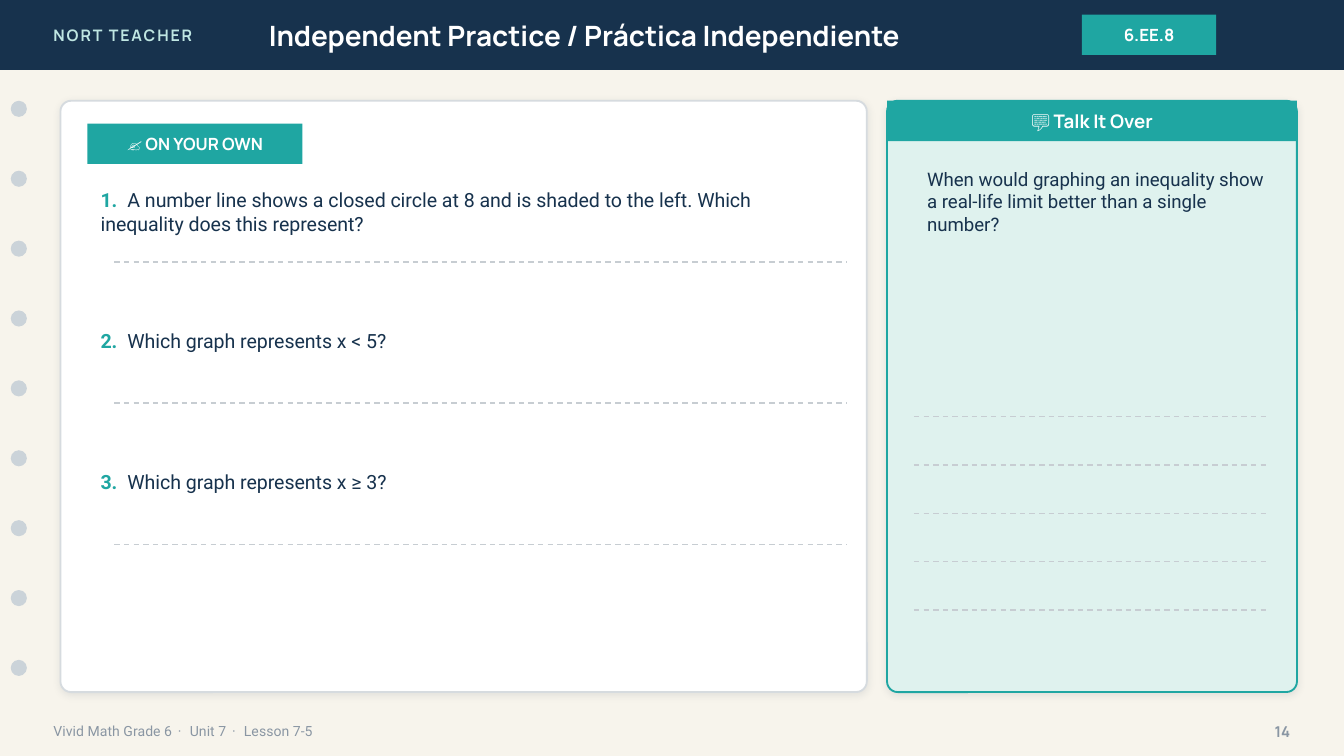
from dataclasses import dataclass

from lxml.etree import SubElement
from pptx import Presentation
from pptx.dml.color import RGBColor
from pptx.enum.dml import MSO_LINE
from pptx.enum.shapes import MSO_CONNECTOR, MSO_SHAPE as SHAPE
from pptx.enum.text import MSO_ANCHOR as ANCHOR, MSO_AUTO_SIZE, PP_ALIGN as ALIGN
from pptx.oxml.ns import qn
from pptx.util import Inches, Pt

NAVY = RGBColor(0x17, 0x32, 0x4D)
TEAL = RGBColor(0x1F, 0xA6, 0xA2)
MINT = RGBColor(0xDF, 0xF2, 0xEE)
PALE_TEAL = RGBColor(0xBF, 0xE6, 0xE2)
CREAM = RGBColor(0xF7, 0xF4, 0xEC)
WHITE = RGBColor(0xFF, 0xFF, 0xFF)
HOLE = RGBColor(0xCB, 0xD3, 0xD9)
EDGE = RGBColor(0xD6, 0xDB, 0xDF)
RULE = RGBColor(0xC7, 0xCD, 0xD2)
MUTED = RGBColor(0x8A, 0x96, 0xA3)
SHADE = RGBColor(0x1C, 0x2E, 0x42)

COLUMNS, ROWS = 100, 56.25
HEADING, BODY = "Manrope", "Roboto"
QUESTIONS = [
    "A number line shows a closed circle at 8 and is shaded to the left. "
    "Which inequality does this represent?",
    "Which graph represents x < 5?",
    "Which graph represents x ≥ 3?",
]


@dataclass
class Box:
    """A region in grid cells of a tenth of an inch."""
    left: float
    top: float
    width: float
    height: float

    def inner(self, left, top, width, height):
        """Return a box placed relative to this one."""
        return Box(self.left + left, self.top + top, width, height)

    def lengths(self):
        """Return left, top, width and height as slide lengths."""
        cells = (self.left, self.top, self.width, self.height)
        return [Inches(cell / 10) for cell in cells]


def style(color, size, name=BODY, bold=False):
    """Return the format values of a run."""
    return {"size": Pt(size), "name": name, "bold": bold, "color": color}


def add_run(paragraph, text, look, spacing=0):
    """Add formatted text, with letter spacing in points."""
    run = paragraph.add_run()
    run.text = text
    for key, value in look.items():
        if key == "color":
            run.font.color.rgb = value
        else:
            setattr(run.font, key, value)
    if spacing:
        run._r.get_or_add_rPr().set("spc", str(round(spacing * 100)))


def set_frame(frame, align=ALIGN.LEFT, anchor=ANCHOR.MIDDLE):
    """Set wrapping and alignment and return the first paragraph."""
    values = {"word_wrap": True, "auto_size": MSO_AUTO_SIZE.NONE,
              "vertical_anchor": anchor}
    for key, value in values.items():
        setattr(frame, key, value)
    paragraph = frame.paragraphs[0]
    paragraph.alignment = align
    return paragraph


def add_text(slide, box, align=ALIGN.LEFT, anchor=ANCHOR.MIDDLE):
    """Add a text box and return its paragraph."""
    return set_frame(slide.shapes.add_textbox(*box.lengths()).text_frame, align, anchor)


def add_block(slide, box, fill, kind=SHAPE.RECTANGLE):
    """Add a plain filled shape."""
    block = slide.shapes.add_shape(kind, *box.lengths())
    block.shadow.inherit = False
    block.fill.solid()
    block.fill.fore_color.rgb = fill
    block.line.fill.background()
    return block


def add_label(slide, box, text, size):
    """Add a teal block with centred white text."""
    paragraph = set_frame(add_block(slide, box, TEAL).text_frame, ALIGN.CENTER)
    add_run(paragraph, text, style(WHITE, size, HEADING, True))


def add_card(slide, box, fill, edge, corner):
    """Add a rounded card with a soft shadow."""
    card = add_block(slide, box, fill, SHAPE.ROUNDED_RECTANGLE)
    card.adjustments[0] = corner
    card.line.color.rgb = edge
    card.line.width = Pt(1)
    effects = card.element.spPr.find(qn("a:effectLst"))
    shadow = SubElement(effects, qn("a:outerShdw"), blurRad=str(Pt(4)),
                        dist=str(Pt(1)), dir="5400000", algn="bl", rotWithShape="0")
    color = SubElement(shadow, qn("a:srgbClr"), val=str(SHADE))
    SubElement(color, qn("a:alpha"), val="10000")


def add_rule(slide, box):
    """Add a dashed writing line along the top of the box."""
    left, top, width, _ = box.lengths()
    rule = slide.shapes.add_connector(MSO_CONNECTOR.STRAIGHT, left, top, left + width, top)
    rule.line.color.rgb = RULE
    rule.line.width = Pt(0.75)
    rule.line.dash_style = MSO_LINE.DASH
    SubElement(rule._element.spPr, qn("a:effectLst"))


def add_header(slide, box):
    """Place the title bar with teacher, title and standard."""
    add_block(slide, box, NAVY)
    teacher = add_text(slide, box.inner(3, 0, 24, box.height))
    add_run(teacher, "NORT TEACHER", style(PALE_TEAL, 8.5, HEADING, True), 1)
    title = slide.shapes.title
    title.left, title.top, title.width, title.height = box.inner(19, 0, 56, box.height).lengths()
    heading = set_frame(title.text_frame)
    heading.line_spacing = 1.0
    add_run(heading, "Independent Practice / Práctica Independiente",
            style(WHITE, 15, HEADING, True))
    title.element.getparent().append(title.element)
    add_label(slide, box.inner(80.5, 1.1, 10, 3), "6.EE.8", 9)


def add_binder_holes(slide, box, count):
    """Place evenly spaced binder holes down the box."""
    for index in range(count):
        hole = box.inner(0, index * box.height / count, box.width, box.width)
        add_block(slide, hole, HOLE, SHAPE.OVAL)


def add_footer(slide, box):
    """Place the lesson line and the page number."""
    look = style(MUTED, 7.5)
    lesson = add_text(slide, box.inner(0, 0, 70, box.height))
    for index, name in enumerate(("Vivid Math Grade 6", "Unit 7", "Lesson 7-5")):
        if index:
            add_run(lesson, " · ", look, 1.24)
        add_run(lesson, name, look)
    page = add_text(slide, box.inner(box.width - 5, 0, 5, box.height), ALIGN.RIGHT)
    add_run(page, "14", style(MUTED, 8, HEADING, True))


def add_practice(slide, box):
    """Place the practice card with numbered questions."""
    add_card(slide, box, WHITE, EDGE, 0.018)
    add_label(slide, box.inner(2, 1.7, 16, 3), "✍️ ON YOUR OWN", 9)
    for index, question in enumerate(QUESTIONS):
        area = box.inner(2, 6 + index * 10.5, box.width - 3.5, 5)
        paragraph = add_text(slide, area, anchor=ANCHOR.TOP)
        tabs = SubElement(paragraph._p.get_or_add_pPr(), qn("a:tabLst"))
        SubElement(tabs, qn("a:tab"), pos=str(Inches(0.2)), algn="l")
        add_run(paragraph, f"{index + 1}.\t", style(TEAL, 10.5, bold=True))
        add_run(paragraph, question, style(NAVY, 10.5))
        add_rule(slide, area.inner(2, 6, area.width - 2, 0))


def add_discussion(slide, box, rules):
    """Place the discussion card with its prompt and writing lines."""
    add_card(slide, box, MINT, TEAL, 0.026)
    add_label(slide, box.inner(0, 0, box.width, 3), "💬 Talk It Over", 10)
    prompt = add_text(slide, box.inner(2, 4.5, box.width - 3.5, 17), anchor=ANCHOR.TOP)
    add_run(prompt, "When would graphing an inequality show a real-life limit "
            "better than a single number?", style(NAVY, 10))
    for index in range(rules):
        add_rule(slide, box.inner(2, 23.5 + index * 3.6, box.width - 4, 0))


def main():
    """Build and save the slide."""
    deck = Presentation()
    _, _, deck.slide_width, deck.slide_height = Box(0, 0, COLUMNS, ROWS).lengths()
    slide = deck.slides.add_slide(deck.slide_layouts[5])
    slide.background.fill.solid()
    slide.background.fill.fore_color.rgb = CREAM
    add_header(slide, Box(0, 0, COLUMNS, 5.2))
    add_binder_holes(slide, Box(0.8, 7.5, 1.2, 46.8), 9)
    add_footer(slide, Box(3, 53, 94, 2.8))
    add_practice(slide, Box(4.5, 7.5, 60, 44))
    add_discussion(slide, Box(66, 7.5, 30.5, 44), 5)
    deck.save("out.pptx")


if __name__ == "__main__":
    main()
